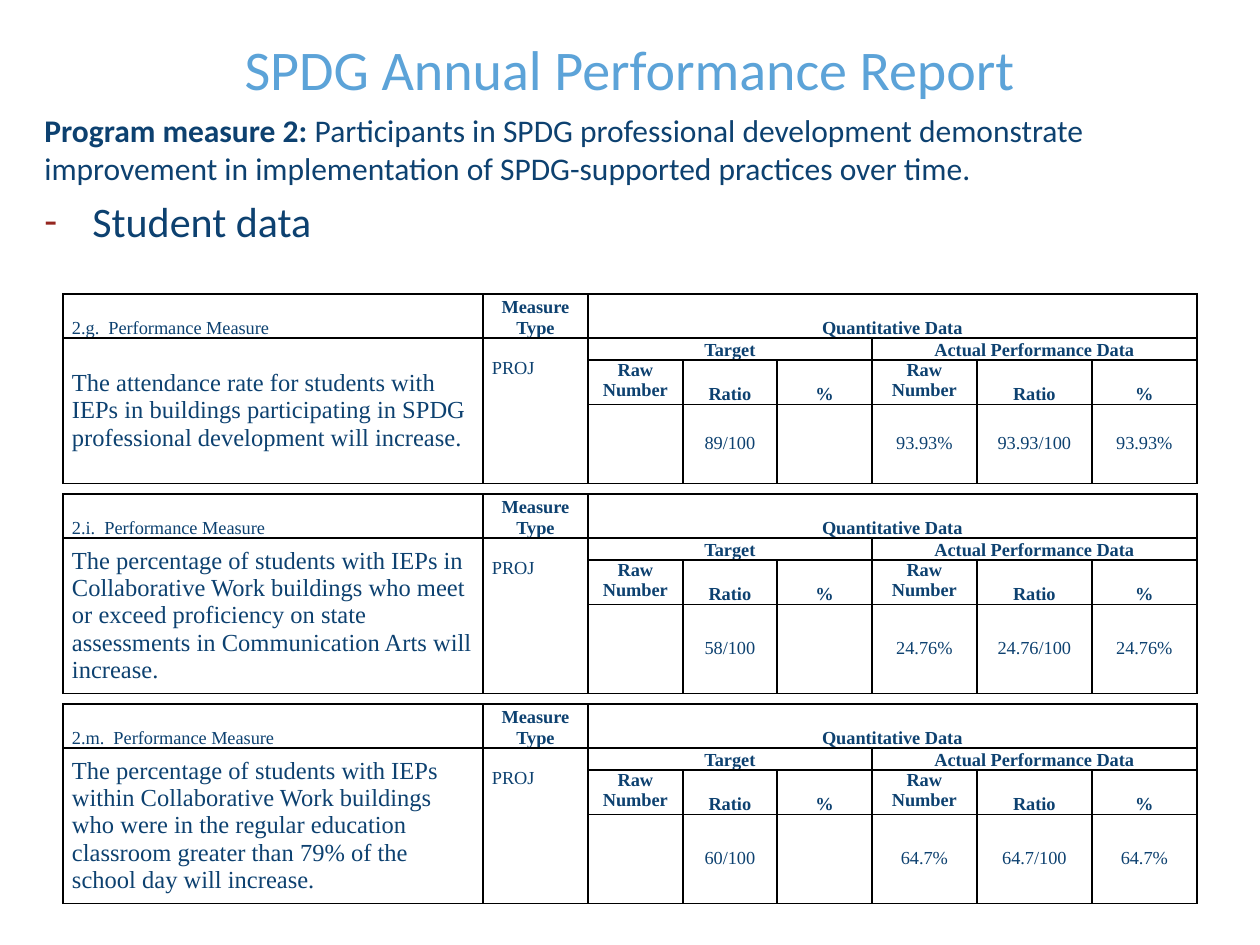
from pptx import Presentation
from pptx.dml.color import RGBColor
from pptx.enum.text import MSO_ANCHOR as Anchor, PP_ALIGN as Align
from pptx.oxml import parse_xml
from pptx.oxml.ns import nsdecls
from pptx.util import Emu, Pt

NAVY = RGBColor(0x0D, 0x41, 0x70)
SKY = RGBColor(0x5C, 0xA3, 0xD8)
BRICK = RGBColor(0x95, 0x26, 0x1F)
WHITE = RGBColor(0xFF, 0xFF, 0xFF)
BLACK = RGBColor(0x00, 0x00, 0x00)

PX_PER_INCH = 126
BLANK_LAYOUT = 6

COLUMN_WIDTHS = [420, 105, 95, 94, 95, 105, 115, 105]
HEADER_HEIGHTS = [41, 20, 41]
CELL_INSET = 9
# first row, first column, last row, last column
MERGES = [(0, 2, 0, 7), (1, 0, 3, 0), (1, 1, 3, 1), (1, 2, 1, 4), (1, 5, 1, 7)]

HEADER = dict(anchor=Anchor.BOTTOM, align=Align.CENTER, bold=True)
RAW_HEADER = dict(HEADER, anchor=Anchor.TOP)
CODE = dict(anchor=Anchor.BOTTOM)
GOAL = dict(anchor=Anchor.MIDDLE, size=14)
KIND = dict(anchor=Anchor.TOP, top=20)
VALUE = dict(anchor=Anchor.MIDDLE, align=Align.CENTER)

SHARED_CELLS = [
    (0, 1, "Measure Type", HEADER),
    (0, 2, "Quantitative Data", HEADER),
    (1, 1, "PROJ", KIND),
    (1, 2, "Target", HEADER),
    (1, 5, "Actual Performance Data", HEADER),
] + [
    (2, first + offset, label, look)
    for first in (2, 5)
    for offset, (label, look) in enumerate(
        [("Raw Number", RAW_HEADER), ("Ratio", HEADER), ("%", HEADER)])
]

# top, height of the value row, code, goal, values from "Target / Raw Number" on
MEASURES = [
    (294, 79, "2.g.",
     "The attendance rate for students with IEPs in buildings participating "
     "in SPDG professional development will increase.",
     ["", "89/100", "", "93.93%", "93.93/100", "93.93%"]),
    (494, 89, "2.i.",
     "The percentage of students with IEPs in Collaborative Work buildings "
     "who meet or exceed proficiency on state assessments in Communication "
     "Arts will increase.",
     ["", "58/100", "", "24.76%", "24.76/100", "24.76%"]),
    (704, 89, "2.m.",
     "The percentage of students with IEPs within Collaborative Work "
     "buildings who were in the regular education classroom greater than "
     "79% of the school day will increase.",
     ["", "60/100", "", "64.7%", "64.7/100", "64.7%"]),
]


def px(length):
    return Emu(round(length * 914400 / PX_PER_INCH))


def apply(target, formats):
    for name, value in formats.items():
        setattr(target, name, value)


class ReportSlide:
    """Holds the style and the current slide."""
    heading_font = "Calibri"
    table_font = "Times New Roman"
    table_size = 10.5

    def __init__(self, slide):
        self.slide = slide

    def run(self, paragraph, text, font, size, color=NAVY, bold=False):
        run = paragraph.add_run()
        run.text = text
        apply(run.font, dict(name=font, size=Pt(size), bold=bold))
        run.font.color.rgb = color

    def text_box(self, box, anchor):
        frame = self.slide.shapes.add_textbox(*map(px, box)).text_frame
        apply(frame, dict(word_wrap=True, vertical_anchor=anchor))
        return frame

    def title(self, box, text):
        paragraph = self.text_box(box, Anchor.MIDDLE).paragraphs[0]
        paragraph.alignment = Align.CENTER
        self.run(paragraph, text, self.heading_font, 32, SKY)

    def body(self, box, lead, statement, topic):
        frame = self.text_box(box, Anchor.TOP)
        intro = frame.paragraphs[0]
        self.run(intro, lead, self.heading_font, 18, bold=True)
        self.run(intro, statement, self.heading_font, 18)
        item = frame.add_paragraph()
        self.dash(item, 48)
        item.space_before = Pt(5)
        self.run(item, topic, self.heading_font, 24)

    def dash(self, paragraph, indent):
        """Give the paragraph a hanging dash bullet."""
        properties = paragraph._p.get_or_add_pPr()
        properties.set("marL", str(px(indent)))
        properties.set("indent", str(-px(indent)))
        for element in (
            f'<a:buClr {nsdecls("a")}><a:srgbClr val="{BRICK}"/></a:buClr>',
            f'<a:buFont {nsdecls("a")} typeface="{self.heading_font}"/>',
            f'<a:buChar {nsdecls("a")} char="-"/>',
        ):
            properties.append(parse_xml(element))

    def borders(self, cell):
        properties = cell._tc.get_or_add_tcPr()
        for side in "LRTB":
            properties.append(parse_xml(
                f'<a:ln{side} {nsdecls("a")} w="{Pt(1)}"><a:solidFill>'
                f'<a:srgbClr val="{BLACK}"/></a:solidFill></a:ln{side}>'))

    def cell(self, cell, text, anchor, align=Align.LEFT, size=table_size,
             bold=False, top=0):
        apply(cell, dict(vertical_anchor=anchor, margin_top=px(top)))
        paragraph = cell.text_frame.paragraphs[0]
        paragraph.alignment = align
        self.run(paragraph, text, self.table_font, size, bold=bold)

    def measure_table(self, top, value_height, code, goal, values):
        heights = HEADER_HEIGHTS + [value_height]
        table = self.slide.shapes.add_table(
            len(heights), len(COLUMN_WIDTHS), px(63), px(top),
            px(sum(COLUMN_WIDTHS)), px(sum(heights))).table
        apply(table, dict(first_row=False, horz_banding=False))
        for column, width in zip(table.columns, COLUMN_WIDTHS):
            column.width = px(width)
        for row, height in zip(table.rows, heights):
            row.height = px(height)
        for cell in table.iter_cells():
            apply(cell, dict(margin_left=px(CELL_INSET), margin_top=0,
                             margin_right=px(CELL_INSET), margin_bottom=0))
            self.borders(cell)
            cell.fill.solid()
            cell.fill.fore_color.rgb = WHITE
        for row, column, last_row, last_column in MERGES:
            table.cell(row, column).merge(table.cell(last_row, last_column))

        own_cells = [(0, 0, f"{code}  Performance Measure", CODE),
                     (1, 0, goal, GOAL)]
        own_cells += [(3, column, value, VALUE)
                      for column, value in enumerate(values, 2) if value]
        for row, column, text, look in SHARED_CELLS + own_cells:
            self.cell(table.cell(row, column), text, **look)


def main():
    deck = Presentation()
    apply(deck, dict(slide_width=px(1260), slide_height=px(945)))
    report = ReportSlide(
        deck.slides.add_slide(deck.slide_layouts[BLANK_LAYOUT]))
    report.title((63, 21, 1134, 95), "SPDG Annual Performance Report")
    report.body(
        (32, 105, 1197, 210), "Program measure 2: ",
        "Participants in SPDG professional development demonstrate "
        "improvement in implementation of SPDG-supported practices over time.",
        "Student data")
    for measure in MEASURES:
        report.measure_table(*measure)
    deck.save("out.pptx")


if __name__ == "__main__":
    main()
